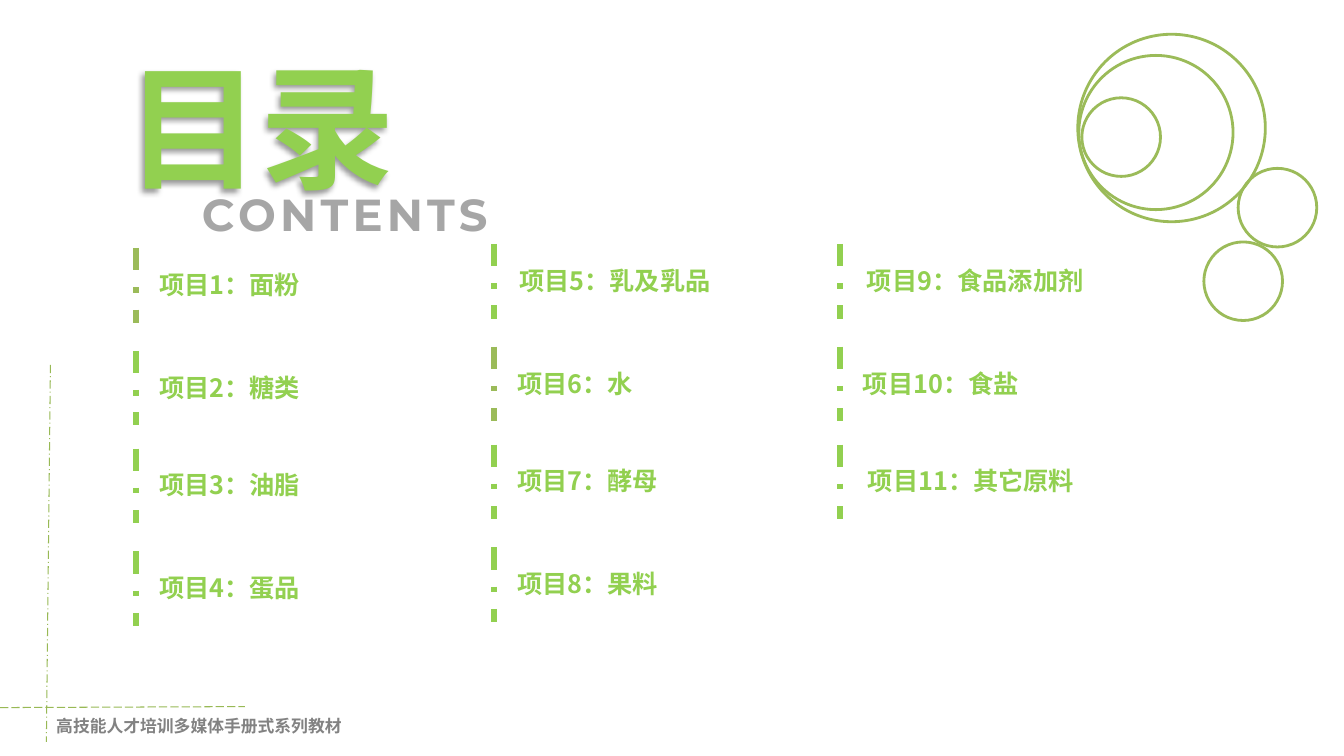
from typing import NamedTuple

from lxml import etree
from pptx import Presentation
from pptx import util as u
from pptx.dml.color import RGBColor
from pptx.enum import dml, shapes, text
from pptx.oxml import ns

LIME = RGBColor(0x92, 0xD0, 0x50)
OLIVE = RGBColor(0x9B, 0xBB, 0x59)
GUIDE_GREEN = RGBColor(0x98, 0xB9, 0x55)
FOOTER_GREY = RGBColor(0x82, 0x82, 0x82)
SUBTITLE_GREY = RGBColor(0xA6, 0xA6, 0xA6)
CJK = "Noto Sans CJK SC"

ROW_OFFSETS = (0, 1.02, 1.99, 3.01)
MARK_HEIGHT = 0.74
LABEL_DROP = 0.16


class Guide(NamedTuple):
    start: tuple[float, float]
    end: tuple[float, float]
    dash: dml.MSO_LINE


class Ring(NamedTuple):
    left: float
    top: float
    diameter: float


class Entry(NamedTuple):
    label: str
    indent: float = 0.13
    width: float = 2.58
    mark_color: RGBColor = LIME


class Column(NamedTuple):
    left: float
    top: float
    entries: tuple[Entry, ...]


GUIDES = (
    Guide((0.5, 3.62), (0.46, 7.36), dml.MSO_LINE.LONG_DASH_DOT),
    Guide((0, 7.02), (2.43, 7.01), dml.MSO_LINE.LONG_DASH),
)
RINGS = (
    Ring(10.69, 0.34, 1.86),
    Ring(10.7, 0.55, 1.53),
    Ring(12.28, 1.67, 0.78),
    Ring(10.73, 0.97, 0.78),
    Ring(11.94, 2.4, 0.78),
)
COLUMNS = (
    Column(1.35, 2.46, (
        Entry("项目1：面粉", mark_color=OLIVE),
        Entry("项目2：糖类"),
        Entry("项目3：油脂"),
        Entry("项目4：蛋品"),
    )),
    Column(4.9, 2.42, (
        Entry("项目5：乳及乳品", 0.15, 3.08),
        Entry("项目6：水", mark_color=OLIVE),
        Entry("项目7：酵母"),
        Entry("项目8：果料"),
    )),
    Column(8.33, 2.42, (
        Entry("项目9：食品添加剂", 0.17, 3.37),
        Entry("项目10：食盐"),
        Entry("项目11：其它原料", 0.18, 3.47),
    )),
)


def add_line(slide, start: tuple[float, float], end: tuple[float, float],
             color: RGBColor, weight: float, dash: dml.MSO_LINE) -> None:
    line = slide.shapes.add_connector(
        shapes.MSO_CONNECTOR.STRAIGHT, *map(u.Inches, start + end))
    line.line.color.rgb = color
    line.line.width = u.Pt(weight)
    line.line.dash_style = dash
    etree.SubElement(line._element.spPr, ns.qn("a:effectLst"))


def add_ring(slide, ring: Ring) -> None:
    circle = slide.shapes.add_shape(
        shapes.MSO_SHAPE.OVAL,
        *map(u.Inches, (ring.left, ring.top, ring.diameter, ring.diameter)))
    circle.shadow.inherit = False
    circle.fill.background()
    circle.line.color.rgb = OLIVE
    circle.line.width = u.Pt(2)


def add_text(slide, wording: str, box: tuple[float, float, float, float],
             size: float, color: RGBColor, font: str = CJK, wrap: bool = True,
             centred: bool = False, spacing: float = 0):
    """Add a bold one-line text box; spacing is the letter gap in points."""
    label = slide.shapes.add_textbox(*map(u.Inches, box))
    label.text_frame.word_wrap = wrap
    paragraph = label.text_frame.paragraphs[0]
    paragraph.text = wording
    paragraph.alignment = text.PP_ALIGN.CENTER if centred else text.PP_ALIGN.LEFT
    paragraph.font.size = u.Pt(size)
    paragraph.font.bold = True
    paragraph.font.name = font
    paragraph.font.color.rgb = color
    defaults = paragraph._p.pPr.find(ns.qn("a:defRPr"))
    etree.SubElement(defaults, ns.qn("a:ea"), typeface=CJK)
    if spacing:
        defaults.set("spc", str(round(spacing * 100)))
    return label


def add_soft_shadow(label) -> None:
    """Cast a blurred shadow down and to the left."""
    effects = etree.SubElement(label._element.spPr, ns.qn("a:effectLst"))
    shadow = etree.SubElement(
        effects, ns.qn("a:outerShdw"), blurRad=str(u.Pt(4)), dist=str(u.Pt(3)),
        dir="8100000", algn="tr", rotWithShape="0")
    black = etree.SubElement(shadow, ns.qn("a:srgbClr"), val="000000")
    etree.SubElement(black, ns.qn("a:alpha"), val="40000")


def add_column(slide, column: Column) -> None:
    for offset, entry in zip(ROW_OFFSETS, column.entries):
        top = column.top + offset
        add_line(slide, (column.left, top), (column.left, top + MARK_HEIGHT),
                 entry.mark_color, 4, dml.MSO_LINE.DASH_DOT)
        add_text(slide, entry.label,
                 (column.left + entry.indent, top + LABEL_DROP, entry.width, 0.4),
                 18, LIME)


def main() -> None:
    deck = Presentation()
    deck.slide_width, deck.slide_height = u.Inches(13.33), u.Inches(7.5)
    slide = deck.slides.add_slide(deck.slide_layouts[6])

    for guide in GUIDES:
        add_line(slide, guide.start, guide.end, GUIDE_GREEN, 0.75, guide.dash)
    add_text(slide, "高技能人才培训多媒体手册式系列教材", (0.46, 7.05, 3.06, 0.3),
             12, FOOTER_GREY, font="Times New Roman", wrap=False)
    for ring in RINGS:
        add_ring(slide, ring)

    title = add_text(slide, "目录", (0.62, 0.39, 3.93, 1.72), 96, LIME, centred=True)
    add_soft_shadow(title)
    add_text(slide, "CONTENTS", (1.77, 1.8, 3.3, 0.64), 32, SUBTITLE_GREY,
             font="Montserrat", wrap=False, centred=True, spacing=3)
    for column in COLUMNS:
        add_column(slide, column)

    deck.save("out.pptx")


if __name__ == "__main__":
    main()
